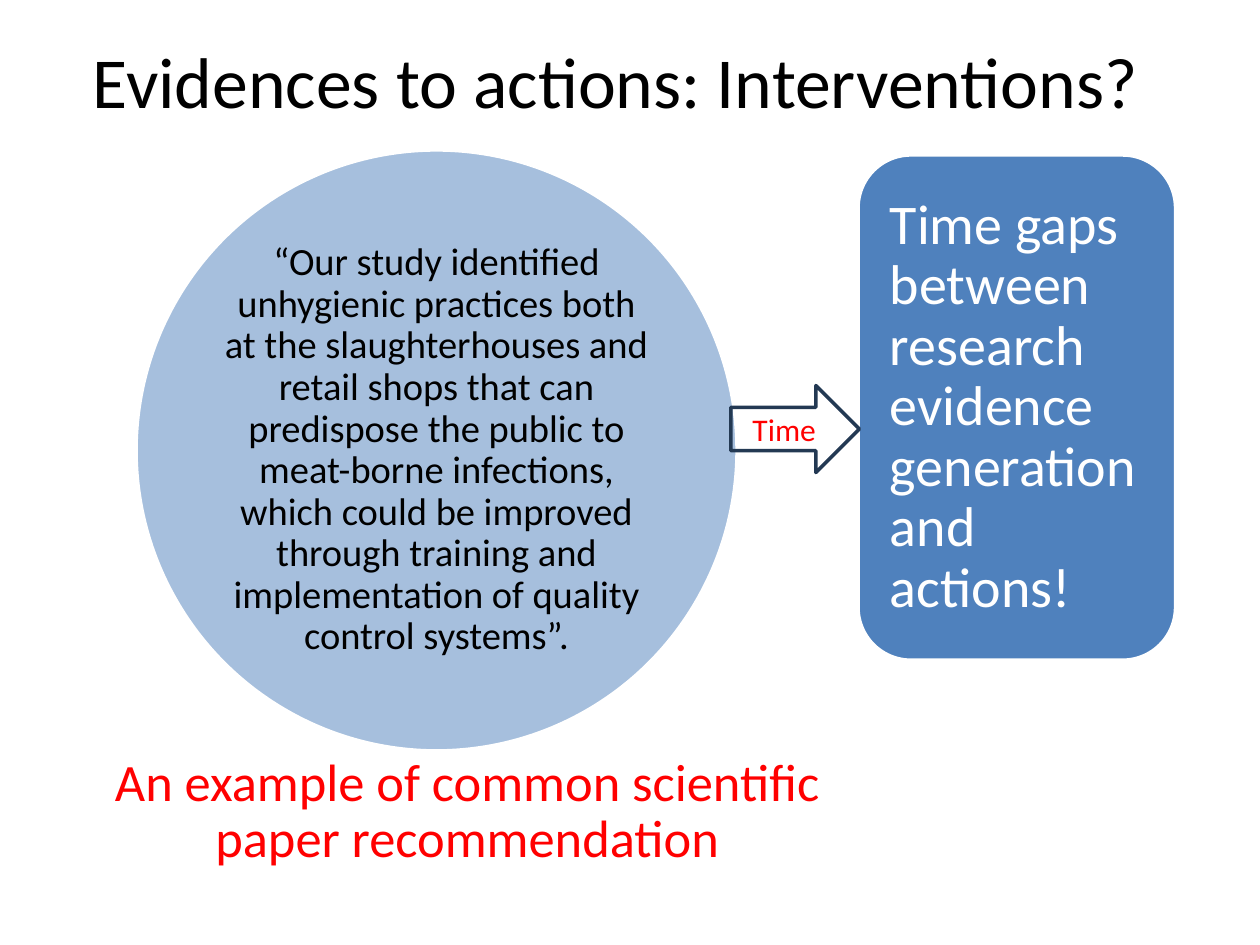
from pptx import Presentation
from pptx.dml.color import RGBColor
from pptx.enum.shapes import MSO_SHAPE
from pptx.enum.text import MSO_ANCHOR, PP_ALIGN
from pptx.oxml.ns import qn
from pptx.util import Inches, Pt
from lxml import etree

LEFT, CENTER = PP_ALIGN.LEFT, PP_ALIGN.CENTER
TOP, MIDDLE = MSO_ANCHOR.TOP, MSO_ANCHOR.MIDDLE
CIRCLE, PANEL, ARROW = MSO_SHAPE.OVAL, MSO_SHAPE.ROUNDED_RECTANGLE, MSO_SHAPE.RIGHT_ARROW

TITLE = "Evidences to actions: Interventions?"
QUOTE = (
    "“Our study identified unhygienic practices both at the slaughterhouses "
    "and retail shops that can predispose the public to meat-borne infections, "
    "which could be improved through training and implementation of quality "
    "control systems”."
)
GAP = "Time gaps between research evidence generation and actions!"
STEP = "Time"
CAPTION = "An example of common scientific paper recommendation"

THEME = {
    "font": "Calibri",
    "black": "000000", "white": "FFFFFF", "red": "FF0000",
    "blue": "4F81BD", "navy": "233953",
    "title": 41, "panel": 32, "caption": 30, "quote": 22, "step": 18,
    "line": 2,
}

COLS, ROWS = 100, 75
GRID = {
    "title": (5.8, 2.9, 86.2, 7.8),
    "panel": (68.1, 12.3, 25.2, 40.1),
    "quote": (10.8, 11.9, 47.7, 47.7),
    "step": (58, 30.6, 10.2, 6.9),
    "caption": (4.1, 59.5, 66, 10),
}

prs = Presentation()
prs.slide_width, prs.slide_height = Inches(10), Inches(7.5)
slide = prs.slides.add_slide(prs.slide_layouts[6])


def color(name):
    return RGBColor.from_string(THEME[name])


def place(name):
    x, y, w, h = GRID[name]
    cw, rh = prs.slide_width / COLS, prs.slide_height / ROWS
    return int(x * cw), int(y * rh), int(w * cw), int(h * rh)


def write(sp, text, size, ink, align=CENTER, anchor=MIDDLE, spacing=0.9, inset=None):
    tf = sp.text_frame
    tf.word_wrap = True
    tf.vertical_anchor = anchor
    if inset is not None:
        tf.margin_left = tf.margin_right = Inches(inset)
        tf.margin_top = tf.margin_bottom = Inches(inset)
    tf.text = text
    p = tf.paragraphs[0]
    p.alignment = align
    p.line_spacing = spacing
    font = p.runs[0].font
    font.name, font.size = THEME["font"], Pt(THEME[size])
    font.color.rgb = color(ink)


def add_box(name, text, ink, **style):
    sp = slide.shapes.add_textbox(*place(name))
    write(sp, text, name, ink, **style)


def add_figure(name, kind, text, ink, line, fill=None, alpha=None, **style):
    sp = slide.shapes.add_shape(kind, *place(name))
    sp.shadow.inherit = False
    sp.line.color.rgb = color(line)
    sp.line.width = Pt(THEME["line"])
    if fill:
        sp.fill.solid()
        sp.fill.fore_color.rgb = color(fill)
    else:
        sp.fill.background()
    if alpha:
        clr = sp.fill._xPr.find(qn("a:solidFill"))[0]
        etree.SubElement(clr, qn("a:alpha"), val=str(alpha * 1000))
    write(sp, text, name, ink, **style)


add_box("title", TITLE, "black")
add_figure("panel", PANEL, GAP, "white", "white", "blue", align=LEFT, inset=0.13)
add_figure("quote", CIRCLE, QUOTE, "black", "white", "blue", alpha=50, inset=0)
add_figure("step", ARROW, STEP, "red", "navy", spacing=1.0)
add_box("caption", CAPTION, "red", anchor=TOP, spacing=Pt(32))

prs.save("out.pptx")
